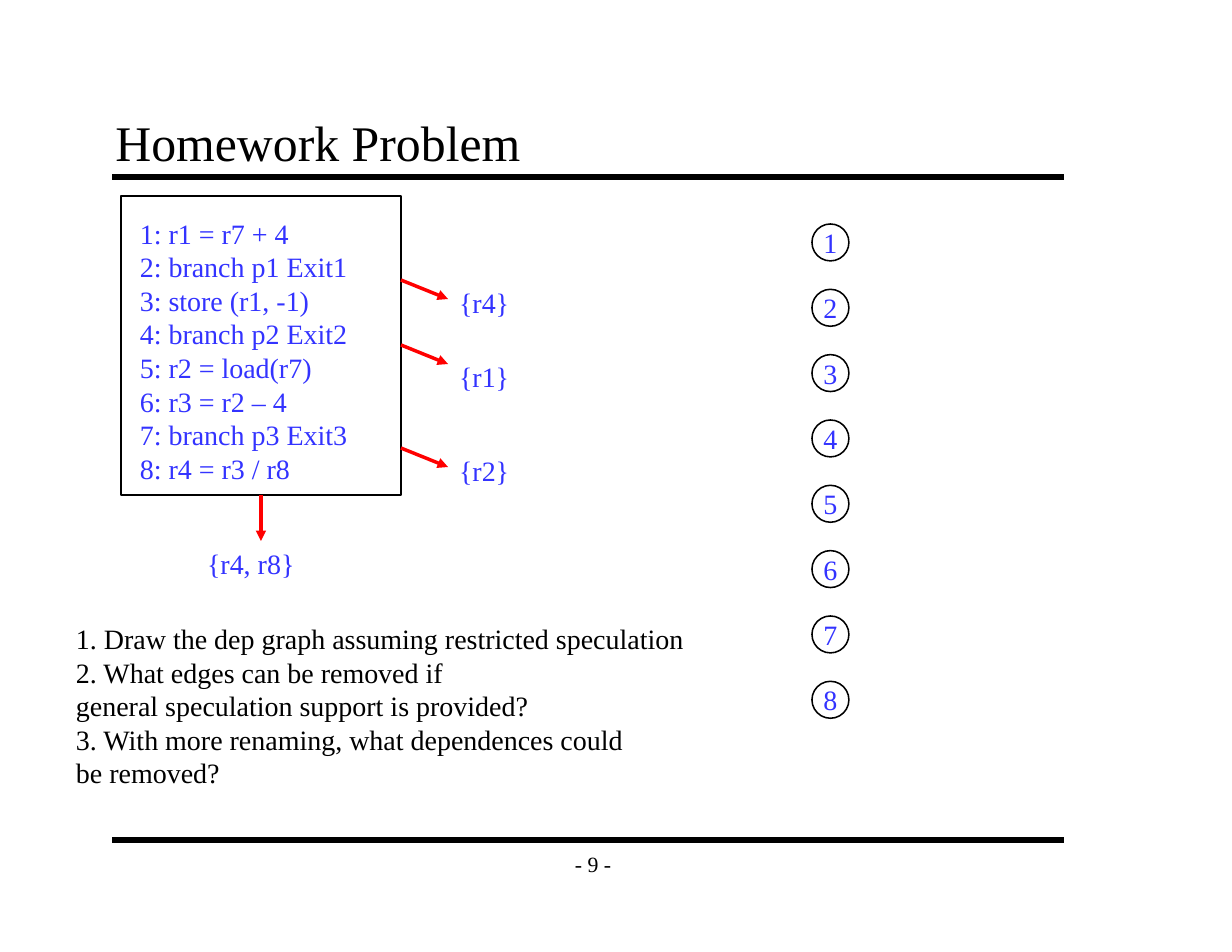
from typing import NamedTuple

from pptx import Presentation
from pptx import util as u
from pptx.dml.color import RGBColor
from pptx.enum import shapes, text
from pptx.oxml.ns import qn
from lxml import etree

BLACK = RGBColor(0x00, 0x00, 0x00)
BLUE = RGBColor(0x33, 0x33, 0xFF)
RED = RGBColor(0xFF, 0x00, 0x00)
FONT = "Times New Roman"

CODE = """1: r1 = r7 + 4
2: branch p1 Exit1
3: store (r1, -1)
4: branch p2 Exit2
5: r2 = load(r7)
6: r3 = r2 – 4
7: branch p3 Exit3
8: r4 = r3 / r8"""

TASKS = """1. Draw the dep graph assuming restricted speculation
2. What edges can be removed if
general speculation support is provided?
3. With more renaming, what dependences could
be removed?"""


class Label(NamedTuple):
    words: str
    left: float
    top: float
    width: float
    height: float = 0.4
    size: int = 18
    color: RGBColor = BLUE
    align: text.PP_ALIGN = text.PP_ALIGN.LEFT
    anchor: text.MSO_ANCHOR = text.MSO_ANCHOR.TOP
    pad: tuple[float, float] = (0.1, 0.05)


LABELS = [
    Label("- 9 -", 4.92, 7.5, 0.75, 0.42, 14, BLACK,
          text.PP_ALIGN.CENTER, text.MSO_ANCHOR.MIDDLE, (0.11, 0.06)),
    Label("Homework Problem", 0.92, 0.92, 8.5, 0.67, 32, BLACK,
          anchor=text.MSO_ANCHOR.BOTTOM, pad=(0.11, 0.06)),
    Label(CODE, 1.15, 1.88, 2.06, 2.5),
    Label("{r4}", 4, 2.5, 0.65),
    Label("{r1}", 4, 3.16, 0.65),
    Label("{r2}", 4, 4, 0.65),
    Label("{r4, r8}", 1.75, 4.83, 0.98),
    Label(TASKS, 0.58, 5.5, 5.69, 1.62, color=BLACK),
]

RULES = [1.58, 7.5]
EXITS = [2.5, 3.08, 4]
NODES = 8
STEP = 7 / 12


def write(shape, label: Label) -> None:
    frame = shape.text_frame
    frame.text = label.words
    frame.word_wrap = False
    frame.vertical_anchor = label.anchor
    frame.margin_left = frame.margin_right = u.Inches(label.pad[0])
    frame.margin_top = frame.margin_bottom = u.Inches(label.pad[1])
    for par in frame.paragraphs:
        par.alignment = label.align
        for run in par.runs:
            run.font.name = FONT
            run.font.size = u.Pt(label.size)
            run.font.color.rgb = label.color


def add_label(slide, label: Label) -> None:
    box = slide.shapes.add_textbox(
        u.Inches(label.left), u.Inches(label.top),
        u.Inches(label.width), u.Inches(label.height))
    write(box, label)


def add_line(slide, x1: float, y1: float, x2: float, y2: float,
             color: RGBColor, width: float, arrow: bool = False):
    line = slide.shapes.add_connector(
        shapes.MSO_CONNECTOR.STRAIGHT,
        u.Inches(x1), u.Inches(y1), u.Inches(x2), u.Inches(y2))
    line.line.color.rgb = color
    line.line.width = u.Pt(width)
    if arrow:
        stroke = line.line._get_or_add_ln()
        etree.SubElement(stroke, qn("a:tailEnd"), type="triangle")
    etree.SubElement(line._element.spPr, qn("a:effectLst"))
    return line


def add_outline(slide, kind: shapes.MSO_SHAPE, left: float, top: float,
                width: float, height: float):
    """Add an unfilled shape with a thin black edge."""
    shape = slide.shapes.add_shape(
        kind, u.Inches(left), u.Inches(top), u.Inches(width), u.Inches(height))
    shape.shadow.inherit = False
    shape.fill.background()
    shape.line.color.rgb = BLACK
    shape.line.width = u.Pt(1)
    return shape


def add_node(slide, num: int) -> None:
    top = 2 + (num - 1) * STEP
    node = add_outline(slide, shapes.MSO_SHAPE.OVAL, 7.25, top, 0.33, 0.33)
    write(node, Label(str(num), 7.25, top, 0.33, 0.33,
                      align=text.PP_ALIGN.CENTER,
                      anchor=text.MSO_ANCHOR.MIDDLE))


def main() -> None:
    deck = Presentation()
    deck.slide_width = u.Inches(11)
    deck.slide_height = u.Inches(8.5)
    slide = deck.slides.add_slide(deck.slide_layouts[6])

    for y in RULES:
        add_line(slide, 1, y, 9.5, y, BLACK, 4)
    for label in LABELS:
        add_label(slide, label)

    block = add_outline(slide, shapes.MSO_SHAPE.RECTANGLE,
                        1.08, 1.75, 2.5, 2.67)
    for y in EXITS:
        add_line(slide, 3.58, y, 4, y + 0.17, RED, 2.25, arrow=True)
    fall = add_line(slide, 2.33, 4.42, 2.33, 4.83, RED, 2.25, arrow=True)
    fall.begin_connect(block, 2)

    for num in range(1, NODES + 1):
        add_node(slide, num)
    deck.save("out.pptx")


if __name__ == "__main__":
    main()
